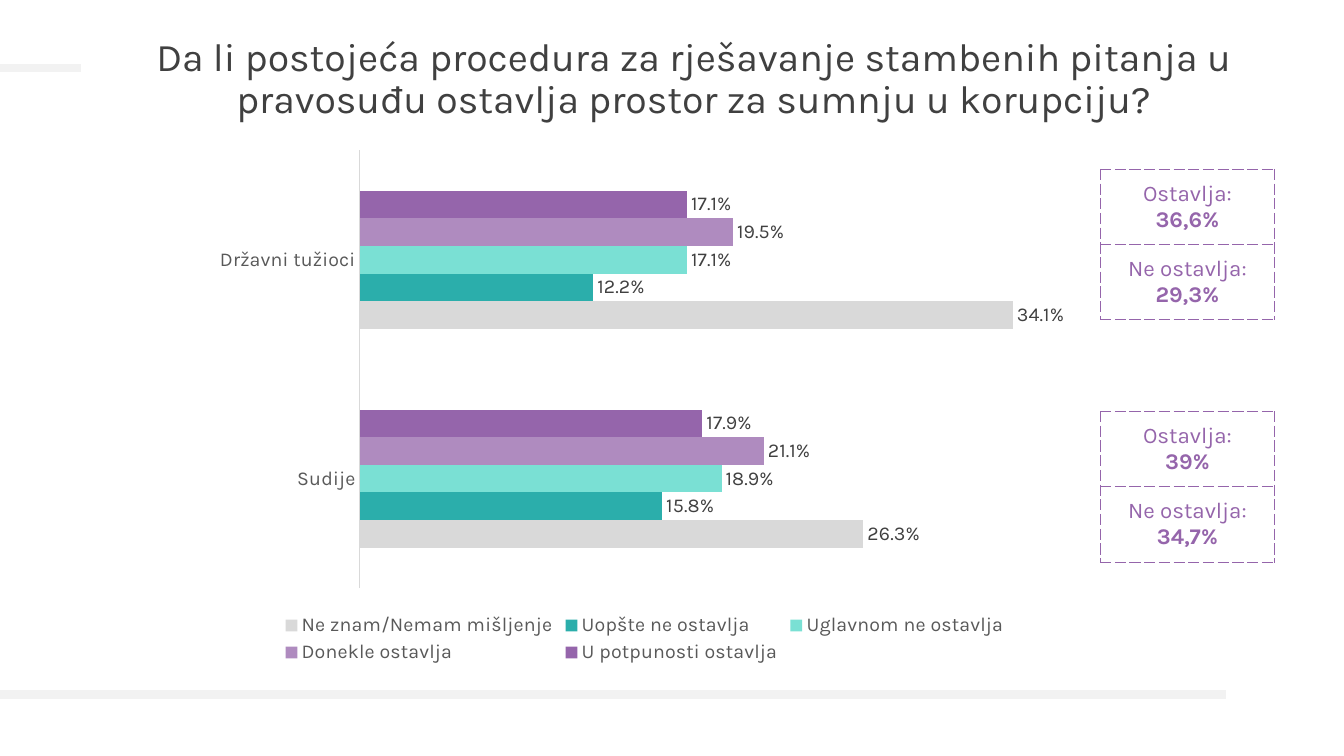
from dataclasses import dataclass

from lxml.etree import SubElement
from pptx import Presentation
from pptx.chart.data import CategoryChartData
from pptx.dml.color import RGBColor
from pptx.enum.chart import XL_CHART_TYPE, XL_LABEL_POSITION, XL_LEGEND_POSITION, XL_TICK_MARK
from pptx.enum.shapes import MSO_CONNECTOR
from pptx.enum.text import MSO_ANCHOR, MSO_AUTO_SIZE, PP_ALIGN
from pptx.oxml import parse_xml
from pptx.oxml.ns import nsdecls, qn
from pptx.util import Pt


@dataclass(frozen=True)
class Theme:
    face: str = "Karla"
    dark: str = "404040"
    grey: str = "595959"
    rule: str = "F2F2F2"
    axis: str = "D9D9D9"
    violet: str = "9565AB"
    lilac: str = "AF8BBF"
    mint: str = "7AE0D4"
    teal: str = "2BAEAB"
    head: int = 28
    label: int = 14
    note: int = 16


THEME = Theme()
TITLE = ("Da li postojeća procedura za rješavanje stambenih pitanja u "
         "pravosuđu ostavlja prostor za sumnju u korupciju?")
GROUPS = ["Državni tužioci", "Sudije"]
SERIES = [
    ("U potpunosti ostavlja", (0.171, 0.179), THEME.violet),
    ("Donekle ostavlja", (0.195, 0.211), THEME.lilac),
    ("Uglavnom ne ostavlja", (0.171, 0.189), THEME.mint),
    ("Uopšte ne ostavlja", (0.122, 0.158), THEME.teal),
    ("Ne znam/Nemam mišljenje", (0.341, 0.263), THEME.axis),
]
LABELS = ["Ostavlja:", "Ne ostavlja:"]
TOTALS = [(121, ("36,6%", "29,3%")), (294, ("39%", "34,7%"))]
PLOT = {"x": 0.217, "y": 0.034, "w": 0.761, "h": 0.817}


def style(font, size, color, bold=False):
    font.name = THEME.face
    font.size = Pt(size)
    font.bold = bold
    font.color.rgb = RGBColor.from_string(color)


def add_rule(slide, width, y):
    """Draw a thick rule from the left edge of the slide."""
    line = slide.shapes.add_connector(MSO_CONNECTOR.STRAIGHT, 0, Pt(y), Pt(width), Pt(y))
    line.line.width = Pt(6)
    line.line.color.rgb = RGBColor.from_string(THEME.rule)
    SubElement(line.element.spPr, qn("a:effectLst"))


def add_title(slide, box):
    title = slide.shapes.title
    title.left, title.top, title.width, title.height = map(Pt, box)
    frame = title.text_frame
    frame.text = TITLE
    frame.word_wrap = True
    frame.auto_size = MSO_AUTO_SIZE.NONE
    frame.vertical_anchor = MSO_ANCHOR.MIDDLE
    para = frame.paragraphs[0]
    para.alignment = PP_ALIGN.CENTER
    para.line_spacing = 0.9
    style(para.font, THEME.head, THEME.dark)


def fix_plot(chart):
    """Pin the inner plot area to set fractions of the chart."""
    area = chart.element.find(".//" + qn("c:plotArea"))
    for old in area.findall(qn("c:layout")):
        area.remove(old)
    modes = "".join(f'<c:{key}Mode val="edge"/>' for key in "xy")
    sizes = "".join(f'<c:{key} val="{part}"/>' for key, part in PLOT.items())
    area.insert(0, parse_xml(
        f'<c:layout {nsdecls("c")}><c:manualLayout><c:layoutTarget val="inner"/>'
        f'{modes}{sizes}</c:manualLayout></c:layout>'))


def add_bars(slide, box):
    data = CategoryChartData(number_format="0.0%")
    data.categories = GROUPS
    for name, values, _ in SERIES:
        data.add_series(name, values)
    chart = slide.shapes.add_chart(XL_CHART_TYPE.BAR_CLUSTERED, *map(Pt, box), data).chart
    style(chart.font, THEME.label, THEME.grey)
    chart.has_title = False
    chart.has_legend = True
    chart.legend.position = XL_LEGEND_POSITION.BOTTOM
    chart.legend.include_in_layout = False
    style(chart.legend.font, THEME.label, THEME.grey)

    cats = chart.category_axis
    cats.reverse_order = True
    cats.major_tick_mark = XL_TICK_MARK.NONE
    cats.format.line.width = Pt(0.75)
    cats.format.line.color.rgb = RGBColor.from_string(THEME.axis)
    style(cats.tick_labels.font, THEME.label, THEME.grey)
    scale = chart.value_axis
    scale.minimum_scale, scale.maximum_scale = 0, 0.4
    scale.has_major_gridlines = False
    scale.visible = False

    plot = chart.plots[0]
    plot.gap_width = 292
    plot.vary_by_categories = False
    for bars, (_, _, color) in zip(plot.series, SERIES):
        bars.format.fill.solid()
        bars.format.fill.fore_color.rgb = RGBColor.from_string(color)
        tags = bars.data_labels
        tags.show_value = True
        tags.position = XL_LABEL_POSITION.OUTSIDE_END
        tags.number_format = "0.0%"
        tags.number_format_is_linked = False
        style(tags.font, THEME.label, THEME.dark)
    fix_plot(chart)


def add_edges(cell):
    """Give a cell dashed borders on all four sides."""
    props = cell._tc.get_or_add_tcPr()
    for spot, side in enumerate("LRTB"):
        props.insert(spot, parse_xml(
            f'<a:ln{side} {nsdecls("a")} w="{Pt(1)}"><a:solidFill>'
            f'<a:srgbClr val="{THEME.violet}"/></a:solidFill>'
            f'<a:prstDash val="dash"/></a:ln{side}>'))


def add_totals(slide, box, values):
    table = slide.shapes.add_table(len(LABELS), 1, *map(Pt, box)).table
    table.first_row = table.horz_banding = False
    for row, (label, value) in enumerate(zip(LABELS, values)):
        cell = table.cell(row, 0)
        cell.fill.background()
        cell.vertical_anchor = MSO_ANCHOR.MIDDLE
        cell.text = f"{label}\n{value}"
        for para, bold in zip(cell.text_frame.paragraphs, (False, True)):
            para.alignment = PP_ALIGN.CENTER
            style(para.font, THEME.note, THEME.violet, bold)
        add_edges(cell)


def main():
    deck = Presentation()
    deck.slide_width, deck.slide_height = Pt(960), Pt(540)
    slide = deck.slides.add_slide(deck.slide_layouts[5])
    add_rule(slide, 57.6, 48.6)
    add_title(slide, (57.6, 25.2, 875.5, 63.4))
    add_rule(slide, 876, 496)
    add_bars(slide, (100.8, 94.3, 719.3, 383))
    for top, values in TOTALS:
        add_totals(slide, (786.2, top, 124, 107.5), values)
    deck.save("out.pptx")


if __name__ == "__main__":
    main()
